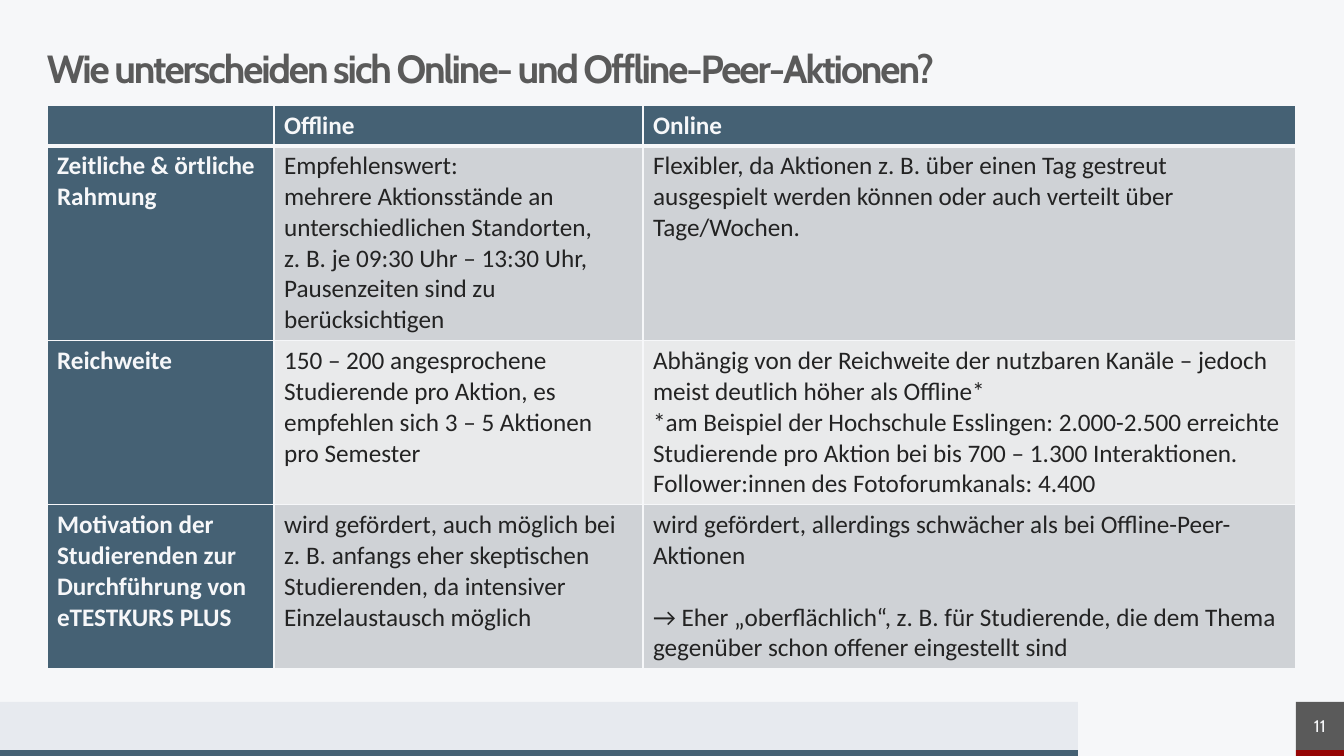
from lxml import etree
from pptx import Presentation
from pptx.dml.color import RGBColor
from pptx.enum.shapes import MSO_SHAPE as SHAPE
from pptx.enum.text import MSO_ANCHOR as ANCHOR, MSO_AUTO_SIZE as AUTO, PP_ALIGN as ALIGN
from pptx.oxml.ns import qn
from pptx.util import Pt

# Content
TITLE = "Wie unterscheiden sich Online- und Offline-Peer-Aktionen?"
PAGE = "11"
# Each cell is a list of paragraphs
ROWS = [
    [[], ["Offline"], ["Online"]],
    [["Zeitliche & örtliche Rahmung"],
     ["Empfehlenswert:",
      "mehrere Aktionsstände an unterschiedlichen Standorten,",
      "z. B. je 09:30 Uhr – 13:30 Uhr, Pausenzeiten sind zu berücksichtigen"],
     ["Flexibler, da Aktionen z. B. über einen Tag gestreut ausgespielt "
      "werden können oder auch verteilt über Tage/Wochen."]],
    [["Reichweite"],
     ["150 – 200 angesprochene Studierende pro Aktion, es empfehlen sich "
      "3 – 5 Aktionen pro Semester"],
     ["Abhängig von der Reichweite der nutzbaren Kanäle – jedoch meist "
      "deutlich höher als Offline*",
      "*am Beispiel der Hochschule Esslingen: 2.000-2.500 erreichte "
      "Studierende pro Aktion bei bis 700 – 1.300 Interaktionen. "
      "Follower:innen des Fotoforumkanals: 4.400"]],
    [["Motivation der Studierenden zur Durchführung von eTESTKURS PLUS"],
     ["wird gefördert, auch möglich bei z. B. anfangs eher skeptischen "
      "Studierenden, da intensiver Einzelaustausch möglich"],
     ["wird gefördert, allerdings schwächer als bei Offline-Peer-Aktionen",
      "→ Eher „oberflächlich“, z. B. für Studierende, die dem Thema "
      "gegenüber schon offener eingestellt sind"]],
]
COLS = [227, 369, 653]
HEIGHTS = [40, 195, 164, 163]
PAPER, BLUE, GREY, INK, RED = "F6F7F9", "456174", "5A5A5A", "232323", "950505"
BANDS = ["E9EAEB", "CFD2D6"]
WIDTH, HEIGHT = 1344, 756
MARGIN, FOOT, STRIP, FOOT_W = 47, 48, 6, 1078


def px(n):
    return round(n * 914400 / 100.8)


def rgb(color):
    return RGBColor.from_string(color)


def style(font, name, size, color, bold=False):
    font.name, font.size, font.bold = name, Pt(size), bold
    font.color.rgb = rgb(color)


def no_insets(tf):
    tf.margin_left = tf.margin_right = tf.margin_top = tf.margin_bottom = 0
    tf.vertical_anchor = ANCHOR.MIDDLE


def block(x, y, w, h, color):
    sp = s.shapes.add_shape(SHAPE.RECTANGLE, px(x), px(y), px(w), px(h))
    sp.shadow.inherit = False
    sp.fill.solid()
    sp.fill.fore_color.rgb = rgb(color)
    sp.line.fill.background()
    return sp


def borders(cell, bottom):
    tcPr = cell._tc.get_or_add_tcPr()
    sides = [("lnL", 1), ("lnR", 1), ("lnT", 1), ("lnB", bottom)]
    for i, (side, width) in enumerate(sides):
        ln = etree.Element(qn(f"a:{side}"), w=str(Pt(width)))
        fill = etree.SubElement(ln, qn("a:solidFill"))
        etree.SubElement(fill, qn("a:srgbClr"), val=PAPER)
        tcPr.insert(i, ln)


prs = Presentation()
prs.slide_width, prs.slide_height = px(WIDTH), px(HEIGHT)
s = prs.slides.add_slide(prs.slide_layouts[5])
s.background.fill.solid()
s.background.fill.fore_color.rgb = rgb(PAPER)

# Footer with page number
strip_y = HEIGHT - STRIP
foot_y = strip_y - FOOT
page_x = WIDTH - FOOT
block(0, foot_y, FOOT_W, FOOT, "E7EAEF")
block(0, strip_y, FOOT_W, STRIP, BLUE)
block(page_x, strip_y, FOOT, STRIP, RED)
tf = block(page_x, foot_y, FOOT, FOOT, GREY).text_frame
no_insets(tf)
tf.text = PAGE
p = tf.paragraphs[0]
p.alignment = ALIGN.CENTER
style(p.runs[0].font, "Cabin", 12, PAPER)

# Title
title = s.shapes.title
title.left, title.top = px(MARGIN), px(47)
title.width, title.height = px(sum(COLS)), px(47)
tf = title.text_frame
tf.text = TITLE
tf.word_wrap, tf.auto_size = True, AUTO.NONE
no_insets(tf)
p = tf.paragraphs[0]
p.alignment, p.line_spacing = ALIGN.LEFT, 0.9
style(p.runs[0].font, "Cabin", 28, GREY, True)
p.runs[0].font._element.set("spc", "-150")

# Comparison table
table = s.shapes.add_table(len(ROWS), len(COLS), px(MARGIN), px(105),
                           px(sum(COLS)), px(sum(HEIGHTS))).table
for column, w in zip(table.columns, COLS):
    column.width = px(w)
for r, (row, h) in enumerate(zip(ROWS, HEIGHTS)):
    table.rows[r].height = px(h)
    for c, lines in enumerate(row):
        cell = table.cell(r, c)
        head = r == 0 or c == 0
        cell.fill.solid()
        cell.fill.fore_color.rgb = rgb(BLUE if head else BANDS[r % 2])
        borders(cell, 3 if r == 0 else 1)
        cell.text_frame.text = "\n".join(lines)
        for p in cell.text_frame.paragraphs:
            if p.text.startswith("→"):
                p.space_before = Pt(22)
            for run in p.runs:
                style(run.font, "Calibri", 18, PAPER if head else INK, head)

prs.save("out.pptx")
